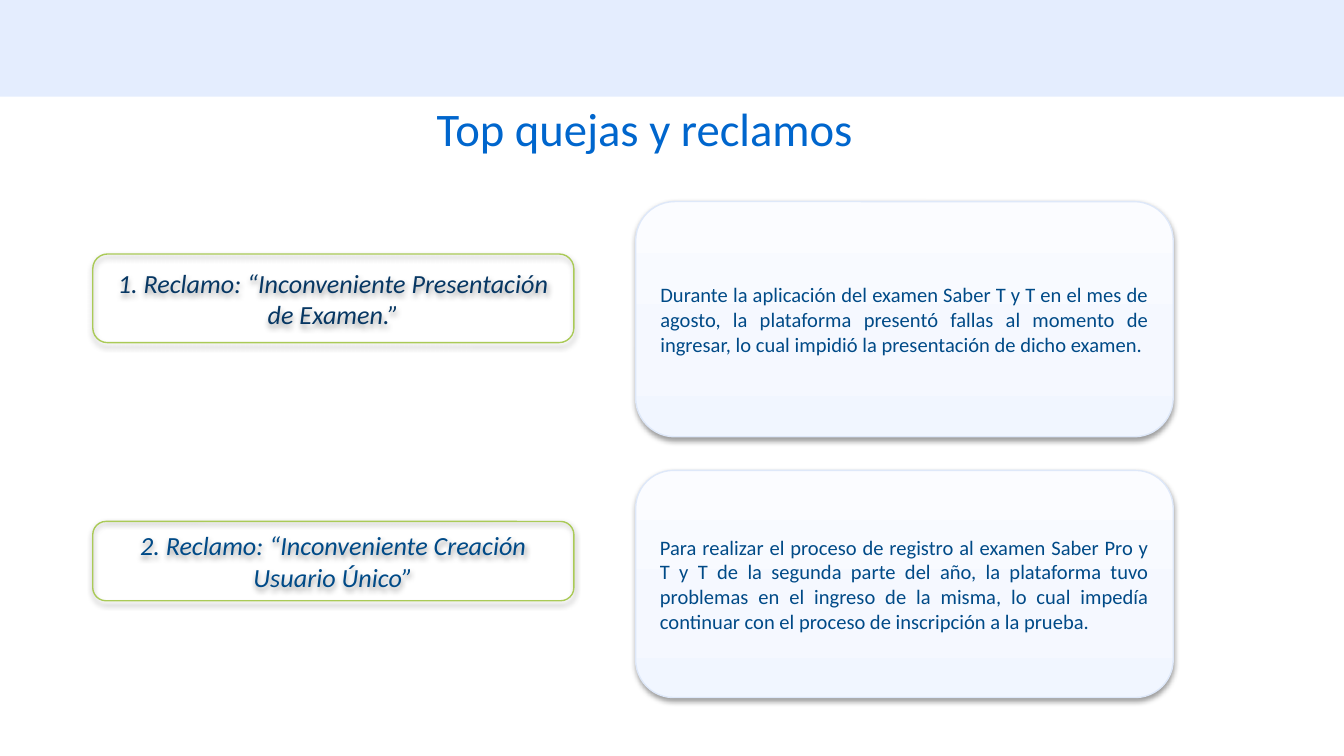
from copy import deepcopy

from lxml import etree
from pptx import Presentation
from pptx.dml.color import RGBColor
from pptx.enum.shapes import MSO_SHAPE
from pptx.enum.text import MSO_ANCHOR, PP_ALIGN
from pptx.oxml.ns import qn
from pptx.util import Inches, Pt

FONT = "Calibri"
BLUE = "004A87"
LABEL_X, LABEL_W = 0.69, 3.58
DETAIL_X, DETAIL_W = 4.73, 4
GRADIENT = [(0, "F1F6FF"), (0.35, "F5F8FF"), (1, "FBFCFF")]

# label: (top, height, colour, text); detail: (top, height, text)
CLAIMS = [
    ((1.89, 0.66, "073763",
      "1. Reclamo: “Inconveniente Presentación de Examen.”"),
     (1.5, 1.75,
      "Durante la aplicación del examen Saber T y T en el mes de agosto, "
      "la plataforma presentó fallas al momento de ingresar, lo cual "
      "impidió la presentación de dicho examen.")),
    ((3.88, 0.59, BLUE,
      "2. Reclamo: “Inconveniente Creación Usuario Único”"),
     (3.5, 1.69,
      "Para realizar el proceso de registro al examen Saber Pro y T y T de "
      "la segunda parte del año, la plataforma tuvo problemas en el ingreso "
      "de la misma, lo cual impedía continuar con el proceso de inscripción "
      "a la prueba.")),
]


def rgb(color):
    return RGBColor.from_string(color)


def write(sp, text, size, color, align, italic=None):
    tf = sp.text_frame
    tf.word_wrap = True
    tf.vertical_anchor = MSO_ANCHOR.MIDDLE
    p = tf.paragraphs[0]
    p.text = text
    p.alignment = align
    p.font.name = FONT
    p.font.size = Pt(size)
    p.font.italic = italic
    p.font.color.rgb = rgb(color)
    return p


def add_shadow(sp):
    sp.shadow.inherit = False
    effects = sp._element.spPr.find(qn("a:effectLst"))
    shadow = etree.SubElement(effects, qn("a:outerShdw"), blurRad=str(Pt(3.1)),
                              dist=str(Pt(1.6)), dir="5400000", rotWithShape="0")
    color = etree.SubElement(shadow, qn("a:srgbClr"), val="000000")
    etree.SubElement(color, qn("a:alpha"), val="38000")


def fill_gradient(sp):
    sp.fill.gradient()
    sp.fill.gradient_angle = 90
    stops = sp._element.spPr.find(qn("a:gradFill")).find(qn("a:gsLst"))
    stops.append(deepcopy(stops[0]))
    for stop, (position, color) in zip(sp.fill.gradient_stops, GRADIENT):
        stop.position = position
        stop.color.rgb = rgb(color)


def add_card(s, x, y, w, h, line):
    sp = s.shapes.add_shape(MSO_SHAPE.ROUNDED_RECTANGLE, Inches(x), Inches(y),
                            Inches(w), Inches(h))
    sp.fill.background()
    sp.line.color.rgb = rgb(line)
    sp.line.width = Pt(0.75)
    add_shadow(sp)
    return sp


def add_header(s, x, y, w):
    # Band
    band = s.shapes.add_shape(MSO_SHAPE.RECTANGLE, Inches(x), Inches(y),
                              Inches(w), Inches(0.72))
    band.shadow.inherit = False
    band.fill.solid()
    band.fill.fore_color.rgb = rgb("E4EDFE")
    band.line.fill.background()

    # Title
    title = s.shapes.add_textbox(Inches(x + 3.18), Inches(y + 0.7),
                                 Inches(3.94), Inches(0.56))
    tf = title.text_frame
    tf.margin_left = tf.margin_right = Inches(0.07)
    tf.margin_top = tf.margin_bottom = Inches(0.04)
    p = write(title, "Top quejas y reclamos", 25, "0066CD", PP_ALIGN.LEFT)
    p.line_spacing = 0.9


def add_label(s, x, y, w, h, color, text):
    sp = add_card(s, x, y, w, h, "AACA57")
    write(sp, text, 14, color, PP_ALIGN.CENTER, italic=True)


def add_detail(s, x, y, w, h, text):
    sp = add_card(s, x, y, w, h, "DEE8F9")
    fill_gradient(sp)
    write(sp, text, 11, BLUE, PP_ALIGN.JUSTIFY)


def main():
    prs = Presentation()
    # 16:9 slide
    prs.slide_width = Inches(10)
    prs.slide_height = Inches(10 * 9 / 16)
    s = prs.slides.add_slide(prs.slide_layouts[6])

    add_header(s, 0, 0, 10)
    for (label_y, label_h, color, name), (y, h, text) in CLAIMS:
        add_label(s, LABEL_X, label_y, LABEL_W, label_h, color, name)
        add_detail(s, DETAIL_X, y, DETAIL_W, h, text)

    prs.save("out.pptx")


if __name__ == "__main__":
    main()
